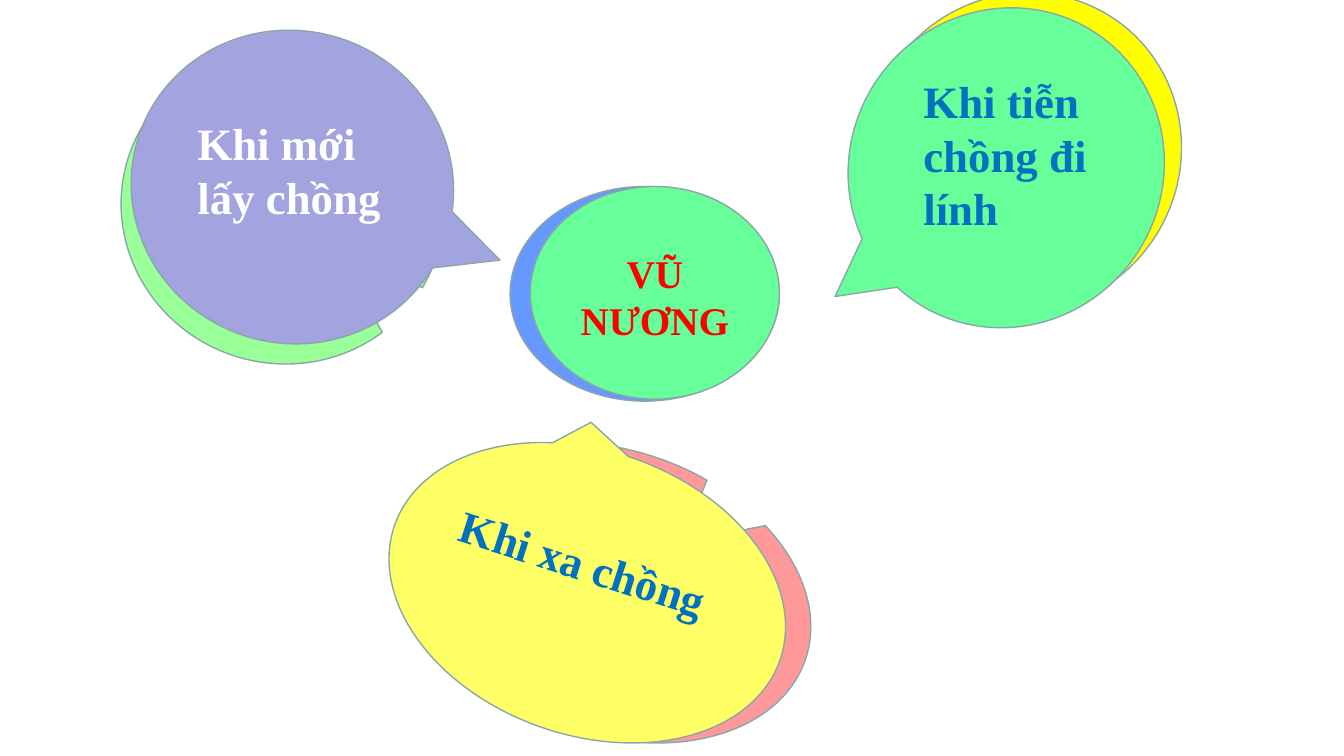
import pptx
import pptx.dml.color
import pptx.enum.shapes
import pptx.enum.text
import pptx.util

RGB = pptx.dml.color.RGBColor
SHAPE = pptx.enum.shapes.MSO_SHAPE
ALIGN = pptx.enum.text.PP_ALIGN

OUTLINE = RGB(0x8A, 0xA6, 0xA8)
BLUE = RGB(0x66, 0x99, 0xFF)
GREEN = RGB(0x66, 0xFF, 0x99)
PALE_GREEN = RGB(0x99, 0xFF, 0x99)
LILAC = RGB(0xA3, 0xA3, 0xE0)
YELLOW = RGB(0xFF, 0xFF, 0x00)
LEMON = RGB(0xFF, 0xFF, 0x66)
PINK = RGB(0xFF, 0x99, 0x99)
RED = RGB(0xFF, 0x00, 0x00)
WHITE = RGB(0xFF, 0xFF, 0xFF)
TEXT_BLUE = RGB(0x00, 0x70, 0xC0)

DEFAULT_TAIL = (-0.21, 0.63)


class Deck:
    font = "Times New Roman"
    px = 9144

    def __init__(self, width, height):
        self.prs = pptx.Presentation()
        self.prs.slide_width = width * self.px
        self.prs.slide_height = height * self.px
        self.slide = self.prs.slides.add_slide(self.prs.slide_layouts[6])
        self.shapes = self.slide.shapes

    def start_group(self):
        self.shapes = self.slide.shapes.add_group_shape().shapes

    def box(self, at):
        return [n * self.px for n in at]

    def shape(self, kind, at, fill, rotation=0):
        sp = self.shapes.add_shape(kind, *self.box(at))
        sp.rotation = rotation
        sp.shadow.inherit = False
        sp.fill.solid()
        sp.fill.fore_color.rgb = fill
        sp.line.color.rgb = OUTLINE
        sp.line.width = pptx.util.Pt(1)
        return sp

    def ellipse(self, at, fill):
        self.shape(SHAPE.OVAL, at, fill)

    def callout(self, at, fill, rotation, tail):
        sp = self.shape(SHAPE.OVAL_CALLOUT, at, fill, rotation)
        sp.adjustments[0], sp.adjustments[1] = tail

    def text(self, at, text, color, size=32, align=ALIGN.LEFT, rotation=0):
        sp = self.shapes.add_textbox(*self.box(at))
        sp.rotation = rotation
        tf = sp.text_frame
        tf.word_wrap = True
        tf.auto_size = pptx.enum.text.MSO_AUTO_SIZE.SHAPE_TO_FIT_TEXT
        tf.text = text
        p = tf.paragraphs[0]
        p.alignment = align
        r = p.runs[0]
        r.font.name = self.font
        r.font.size = pptx.util.Pt(size)
        r.font.bold = True
        r.font.color.rgb = color


def main():
    deck = Deck(1333, 750)

    deck.start_group()
    deck.ellipse((506, 185, 267, 213), BLUE)
    deck.ellipse((526, 185, 247, 211), GREEN)
    deck.text((558, 242, 183, 104), "VŨ NƯƠNG", RED, size=28, align=ALIGN.CENTER)

    deck.start_group()
    deck.callout((125, 45, 310, 321), PALE_GREEN, 289.4, (-0.08, 0.2))
    deck.callout((135, 25, 310, 321), LILAC, 289.4, (0, 0.68))
    deck.text((186, 110, 209, 118), "Khi mới lấy chồng", WHITE)

    deck.start_group()
    deck.callout((860, -9, 310, 321), YELLOW, 35.2, DEFAULT_TAIL)
    deck.callout((843, 6, 310, 321), GREEN, 35.2, DEFAULT_TAIL)
    deck.text((906, 68, 228, 172), "Khi tiễn chồng đi lính", TEXT_BLUE)

    deck.start_group()
    deck.callout((405, 447, 405, 282), PINK, 199.4, (-0.12, 0.25))
    deck.callout((380, 447, 405, 282), LEMON, 199.4, (0.13, 0.57))
    deck.text((441, 537, 341, 64), "Khi xa chồng", TEXT_BLUE, rotation=17.7)

    deck.prs.save("out.pptx")


if __name__ == "__main__":
    main()
